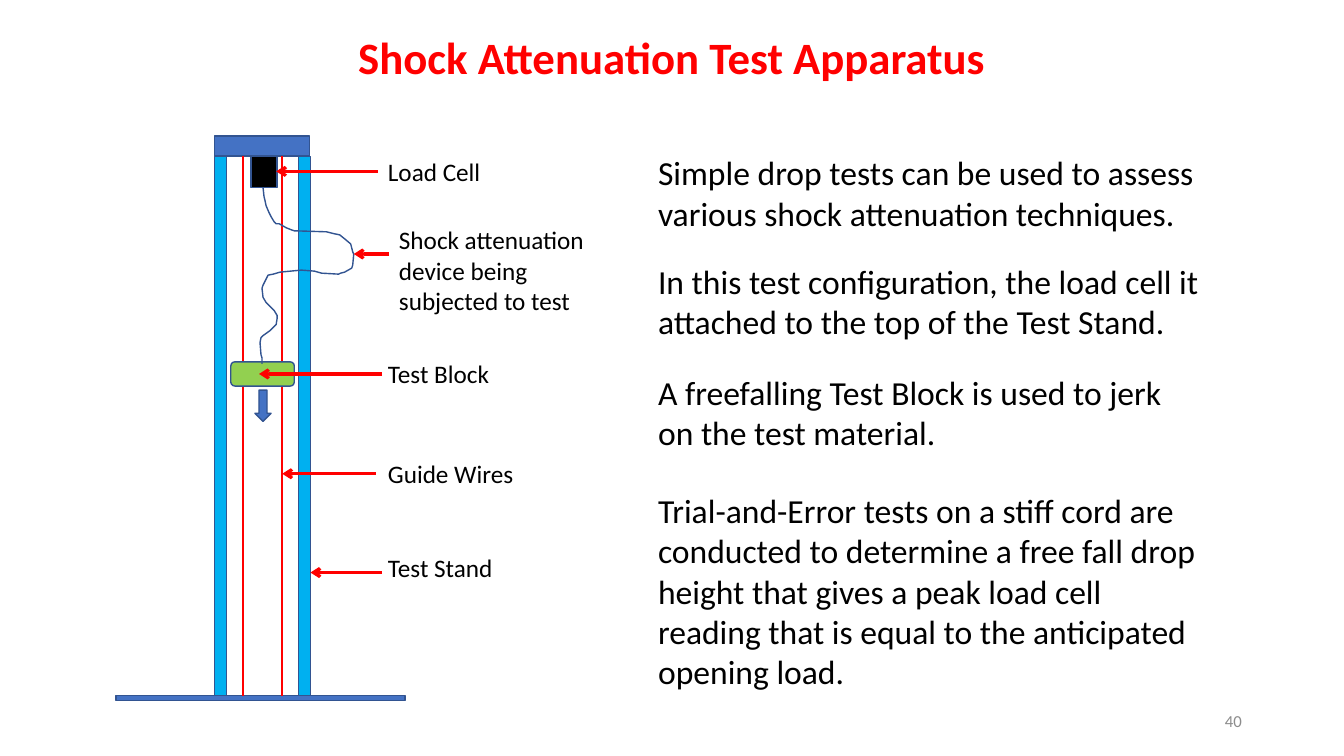
from dataclasses import dataclass

from lxml.etree import SubElement
from pptx import Presentation
from pptx.dml.color import RGBColor
from pptx.enum.shapes import MSO_CONNECTOR, MSO_SHAPE
from pptx.enum.text import MSO_ANCHOR, PP_ALIGN
from pptx.oxml.ns import qn
from pptx.util import Inches, Pt


@dataclass(frozen=True)
class Theme:
    font: str = "Calibri"
    red: str = "FF0000"
    black: str = "000000"
    gray: str = "8C8C8C"
    blue: str = "4472C4"
    rail: str = "00B0F0"
    green: str = "92D050"
    outline: str = "325491"
    title_size: int = 32
    body_size: int = 24
    label_size: int = 18
    number_size: int = 12
    outline_width: float = 1
    wire_width: float = 1.5
    arrow_width: float = 2.25


THEME = Theme()

BODY_TEXTS = [
    (1.46, 6.12, 0.91, "Simple drop tests can be used to assess various shock attenuation techniques."),
    (2.54, 5.61, 0.91, "In this test configuration, the load cell it attached to the top of the Test Stand."),
    (3.64, 5.61, 0.91, "A freefalling Test Block is used to jerk on the test material."),
    (4.81, 5.61, 2.12, "Trial-and-Error tests on a stiff cord are conducted to determine a free fall "
                       "drop height that gives a peak load cell reading that is equal to the "
                       "anticipated opening load."),
]

LABELS = [
    ((3.75, 1.5, 2.32, 0.4), "Load Cell"),
    ((3.86, 2.18, 2.17, 1.01), "Shock attenuation device being subjected to test"),
    ((3.75, 3.51, 2.32, 0.4), "Test Block"),
    ((3.75, 4.5, 2.32, 0.4), "Guide Wires"),
    ((3.75, 5.43, 2.32, 0.4), "Test Stand"),
]

POINTERS = [
    (3.75, 2.74, 1.7),
    (3.86, 3.51, 2.52),
    (3.79, 2.57, 3.71),
    (3.73, 2.8, 4.7),
    (3.79, 3.08, 5.68),
]

CORD_POINTS = [
    (2.61, 1.86), (2.62, 1.95), (2.63, 1.99), (2.64, 2.04), (2.67, 2.11),
    (2.69, 2.15), (2.72, 2.2), (2.74, 2.22), (2.77, 2.22), (2.84, 2.26),
    (2.89, 2.28), (2.92, 2.29), (3.24, 2.3), (3.32, 2.32), (3.37, 2.33),
    (3.42, 2.37), (3.48, 2.42), (3.5, 2.5), (3.51, 2.52), (3.5, 2.63),
    (3.49, 2.66), (3.42, 2.7), (3.38, 2.71), (3.36, 2.72), (3.19, 2.71),
    (3.12, 2.69), (2.99, 2.68), (2.78, 2.7), (2.71, 2.72), (2.66, 2.73),
    (2.61, 2.83), (2.6, 2.86), (2.61, 2.95), (2.64, 3), (2.66, 3.02),
    (2.7, 3.06), (2.72, 3.08), (2.75, 3.13), (2.75, 3.16), (2.74, 3.22),
    (2.7, 3.26), (2.68, 3.28), (2.61, 3.33), (2.59, 3.35), (2.58, 3.4),
    (2.59, 3.52), (2.6, 3.55), (2.6, 3.61),
]


def color(value):
    return RGBColor.from_string(value)


def add_text(shapes, box, text, size, ink=THEME.black, bold=False,
             align=PP_ALIGN.LEFT, anchor=MSO_ANCHOR.TOP, line_spacing=None):
    frame = shapes.add_textbox(*map(Inches, box)).text_frame
    frame.word_wrap = True
    frame.vertical_anchor = anchor
    paragraph = frame.paragraphs[0]
    paragraph.alignment = align
    paragraph.line_spacing = line_spacing
    run = paragraph.add_run()
    run.text = text
    run.font.name = THEME.font
    run.font.size = Pt(size)
    run.font.bold = bold
    run.font.color.rgb = color(ink)


def outline(shape):
    shape.shadow.inherit = False
    shape.line.color.rgb = color(THEME.outline)
    shape.line.width = Pt(THEME.outline_width)


def add_part(shapes, box, fill, preset=MSO_SHAPE.RECTANGLE):
    shape = shapes.add_shape(preset, *map(Inches, box))
    shape.fill.solid()
    shape.fill.fore_color.rgb = color(fill)
    outline(shape)


def add_line(shapes, start, end, width, arrow=False):
    connector = shapes.add_connector(MSO_CONNECTOR.STRAIGHT, *map(Inches, start + end))
    connector.line.color.rgb = color(THEME.red)
    connector.line.width = Pt(width)
    if arrow:
        SubElement(connector.line._get_or_add_ln(), qn("a:tailEnd"), type="arrow")
    SubElement(connector._element.spPr, qn("a:effectLst"))


def add_cord(shapes, points):
    start, *rest = [(Inches(x), Inches(y)) for x, y in points]
    builder = shapes.build_freeform(*start)
    builder.add_line_segments(rest, close=False)
    cord = builder.convert_to_shape()
    cord.fill.background()
    outline(cord)


def add_test_stand(shapes):
    top, floor = 1.55, 6.9
    for left in (2.13, 2.96):
        add_part(shapes, (left, top, 0.12, floor - top), THEME.rail)
    add_part(shapes, (1.15, floor, 2.87, 0.05), THEME.blue)
    add_part(shapes, (2.13, 1.35, 0.94, 0.2), THEME.blue)
    for x in (2.41, 2.8):
        add_line(shapes, (x, top), (x, floor), THEME.wire_width)
    add_part(shapes, (2.29, 3.59, 0.63, 0.24), THEME.green, MSO_SHAPE.ROUNDED_RECTANGLE)
    add_part(shapes, (2.49, top, 0.26, 0.31), THEME.black)
    add_cord(shapes, CORD_POINTS)
    add_part(shapes, (2.53, 3.87, 0.16, 0.31), THEME.blue, MSO_SHAPE.DOWN_ARROW)


def add_callouts(shapes):
    for box, text in LABELS:
        add_text(shapes, box, text, THEME.label_size)
    for start, end, y in POINTERS:
        add_line(shapes, (start, y), (end, y), THEME.arrow_width, arrow=True)


def main():
    presentation = Presentation()
    presentation.slide_width = Inches(40 / 3)
    presentation.slide_height = Inches(7.5)
    slide = presentation.slides.add_slide(presentation.slide_layouts[6])

    add_text(slide.shapes, (9.42, 6.95, 3, 0.4), "40", THEME.number_size, THEME.gray,
             align=PP_ALIGN.RIGHT, anchor=MSO_ANCHOR.MIDDLE)
    add_text(slide.shapes, (3.11, 0.19, 7.11, 0.81), "Shock Attenuation Test Apparatus",
             THEME.title_size, THEME.red, bold=True, align=PP_ALIGN.CENTER,
             anchor=MSO_ANCHOR.MIDDLE, line_spacing=0.9)

    apparatus = slide.shapes.add_group_shape().shapes
    add_test_stand(apparatus)
    add_callouts(apparatus)

    for top, width, height, text in BODY_TEXTS:
        add_text(slide.shapes, (6.43, top, width, height), text, THEME.body_size)

    presentation.save("out.pptx")


if __name__ == "__main__":
    main()
